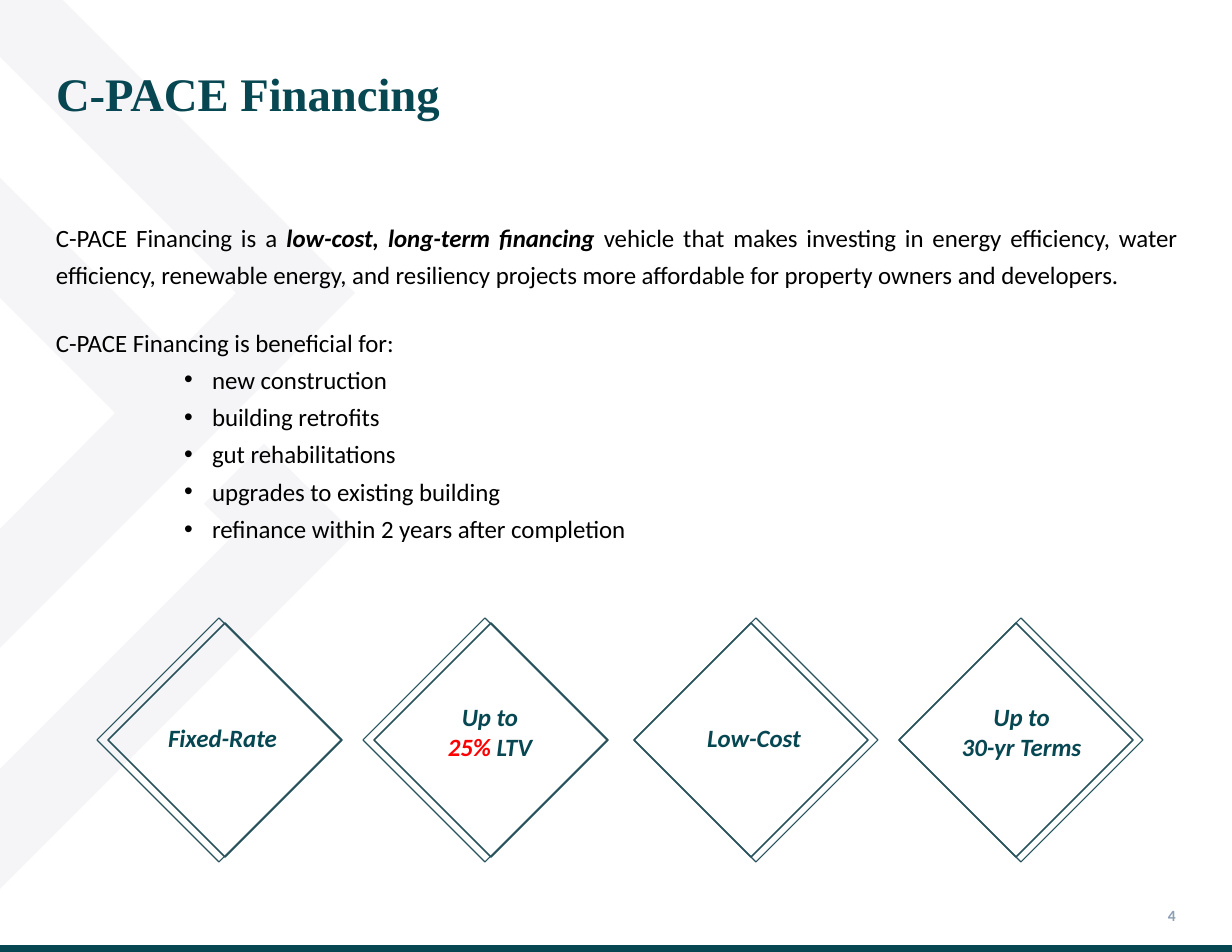
from pptx import Presentation
from pptx.dml.color import RGBColor
from pptx.enum.shapes import MSO_SHAPE as Shape
from pptx.enum.text import MSO_ANCHOR as Anchor, MSO_AUTO_SIZE as AutoSize, PP_ALIGN as Align
from pptx.util import Emu, Pt

TEAL = RGBColor(0x06, 0x47, 0x52)
OUTLINE = RGBColor(0x28, 0x52, 0x5C)
PALE = RGBColor(0xF5, 0xF5, 0xF7)
BLACK = RGBColor(0, 0, 0)
RED = RGBColor(0xFF, 0, 0)
SLATE = RGBColor(0x8D, 0x9E, 0xB5)

SCALE = 914400 / 112  # EMU in one px
WIDTH, HEIGHT = 1232, 952


def px(n):
    return Emu(round(n * SCALE))


class Deck:
    """Holds the style and the current slide; text is lists of (text, format) runs."""

    body = dict(name="Calibri", size=Pt(16), bold=False, italic=False)
    label_style = dict(body, bold=True, italic=True)
    heading = dict(name="Times New Roman", size=Pt(30), bold=True)
    number = dict(name="Calibri", size=Pt(10), bold=True)

    def __init__(self):
        self.prs = Presentation()
        self.prs.slide_width, self.prs.slide_height = px(WIDTH), px(HEIGHT)
        self.s = self.prs.slides.add_slide(self.prs.slide_layouts[1])

    def place(self, sp, box, insets=(0, 0), wrap=True):
        sp.left, sp.top, sp.width, sp.height = map(px, box)
        tf = sp.text_frame
        left, top = insets
        values = dict(margin_left=px(left), margin_top=px(top), margin_right=0,
                      margin_bottom=0, word_wrap=wrap, auto_size=AutoSize.NONE,
                      vertical_anchor=Anchor.TOP)
        for key, value in values.items():
            setattr(tf, key, value)
        return tf

    def fill_text(self, tf, paragraphs, style, color, **para):
        for i, runs in enumerate(paragraphs):
            p = tf.paragraphs[0] if i == 0 else tf.add_paragraph()
            for key, value in para.items():
                setattr(p, key, value)
            for text, extra in runs:
                r = p.add_run()
                r.text = text
                values = dict(style, **extra)
                r.font.color.rgb = values.pop("color", color)
                for key, value in values.items():
                    setattr(r.font, key, value)

    def title(self, text, box):
        tf = self.place(self.s.shapes.title, box, (1, 24))
        self.fill_text(tf, [[(text, {})]], self.heading, TEAL, alignment=Align.LEFT)

    def bullets(self, items, box, margin, hang):
        tf = self.place(self.s.placeholders[1], box, (11, 6))
        self.fill_text(tf, [[(item, {})] for item in items], self.body, BLACK,
                       alignment=Align.JUSTIFY, line_spacing=1.25, space_before=Pt(0))
        for p in tf.paragraphs:
            pPr = p._p.get_or_add_pPr()
            pPr.set("marL", str(px(margin)))
            pPr.set("indent", str(px(-hang)))

    def text(self, paragraphs, box, style, color, insets=(0, 0), wrap=True, **para):
        tf = self.place(self.s.shapes.add_textbox(0, 0, 0, 0), box, insets, wrap)
        self.fill_text(tf, paragraphs, style, color, **para)
        return tf

    def diamond(self, left, middle, size, weight):
        sp = self.s.shapes.add_shape(Shape.DIAMOND, px(left), px(middle - size / 2),
                                     px(size), px(size))
        sp.shadow.inherit = False
        sp.fill.background()
        sp.line.color.rgb = OUTLINE
        sp.line.width = Pt(weight)

    def backdrop(self, outlines, color):
        """Filled outlines behind everything else."""
        start, *rest = outlines[0]
        fb = self.s.shapes.build_freeform(*start, scale=SCALE)
        fb.add_line_segments(rest)
        for start, *rest in outlines[1:]:
            fb.move_to(*start)
            fb.add_line_segments(rest)
        sp = fb.convert_to_shape()
        sp.shadow.inherit = False
        sp.fill.solid()
        sp.fill.fore_color.rgb = color
        sp.line.fill.background()
        self.s.shapes._spTree.insert(2, sp._element)


def main():
    deck = Deck()

    # Background chevrons and footer bar
    deck.backdrop([
        [(264, 444), (204, 504), (235, 534), (0, 769), (0, 889), (355, 534)],
        [(0, 178), (0, 298), (115, 413), (0, 529), (0, 648), (355, 293),
         (63, 0), (0, 0), (0, 57), (236, 293), (176, 354)],
    ], PALE)
    deck.backdrop([[(0, 945), (WIDTH, 945), (WIDTH, HEIGHT), (0, HEIGHT)]], TEAL)

    # Title and introduction
    deck.title("C-PACE Financing", (55, 41, 724, 76))
    strong = dict(bold=True, italic=True)
    intro = deck.text([
        [("C-PACE Financing is a ", {}),
         ("low-cost, long-term financing ", strong),
         ("vehicle that makes investing in energy efficiency, water efficiency, "
          "renewable energy, and resiliency projects more affordable for property "
          "owners and developers.", {})],
        [("C-PACE Financing is beneficial for:", {})],
    ], (55, 212, 1123, 143), deck.body, BLACK, (1, 3),
        alignment=Align.JUSTIFY, line_spacing=1.25)
    intro.paragraphs[1].space_before = Pt(19.5)

    # Beneficial uses
    deck.bullets(["new construction", "building retrofits", "gut rehabilitations",
                  "upgrades to existing building",
                  "refinance within 2 years after completion"],
                 (4, 351, 724, 197), margin=197, hang=28)

    # Double diamonds: inner left, outer left, label box, label lines
    features = [
        (108, 97, (168, 721, 109, 34), [[("Fixed-Rate", {})]]),
        (374, 363, (446, 700, 88, 62),
         [[("Up to", {})], [("25% ", dict(color=RED)), ("LTV", {})]]),
        (634, 634, (707, 721, 94, 34), [[("Low-Cost", {})]]),
        (899, 899, (959, 700, 125, 64), [[("Up to", {})], [("30-yr Terms", {})]]),
    ]
    for inner, outer, box, lines in features:
        deck.diamond(inner, 740, 234, 1)
        deck.diamond(outer, 740, 244, 0.75)
        deck.text(lines, box, deck.label_style, TEAL, (0, 2), wrap=False,
                  alignment=Align.CENTER)

    # Page number
    deck.text([[("4", {})]], (1156, 908, 27, 19), deck.number, SLATE, (12, 0),
              line_spacing=Pt(10.5))

    deck.prs.save("out.pptx")


if __name__ == "__main__":
    main()
